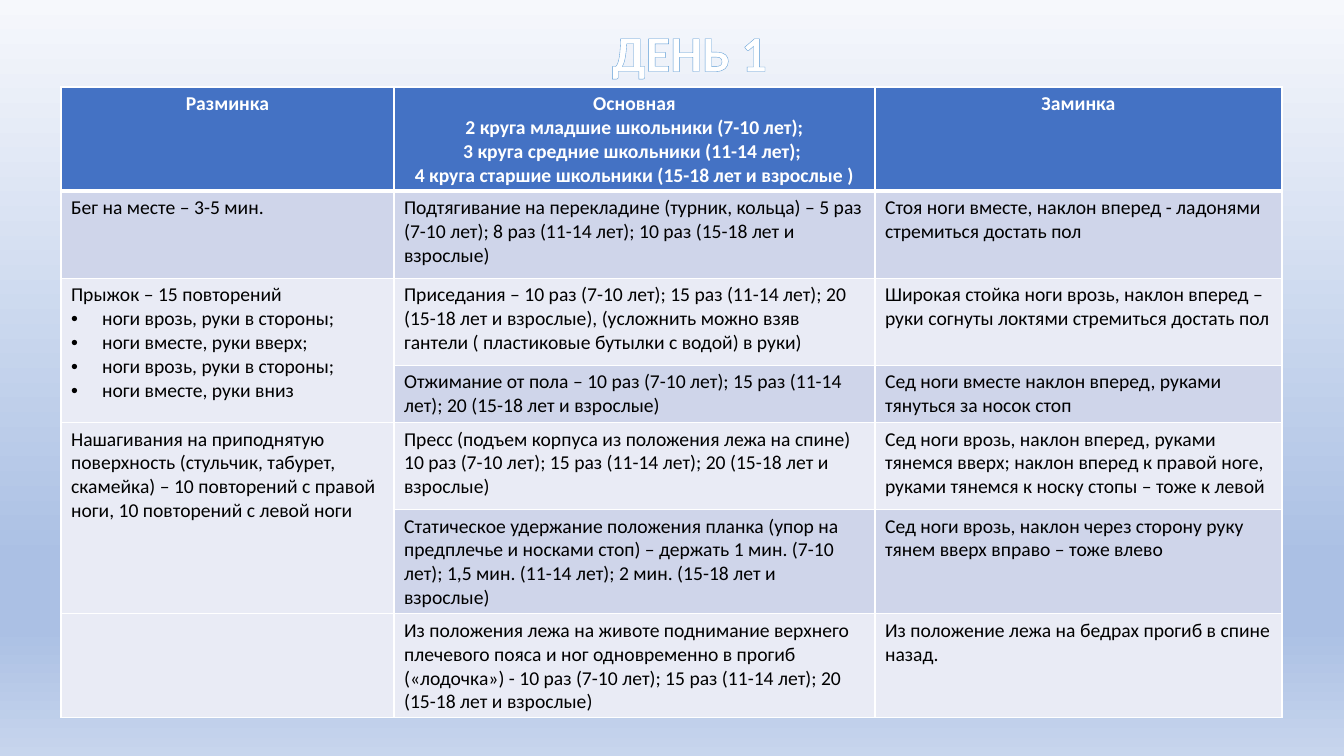
from dataclasses import dataclass

from lxml.etree import SubElement
from pptx import Presentation
from pptx.dml.color import RGBColor
from pptx.enum.text import MSO_ANCHOR, MSO_AUTO_SIZE, PP_ALIGN
from pptx.oxml import parse_xml
from pptx.oxml.ns import nsdecls, qn
from pptx.slide import Slide
from pptx.table import _Cell
from pptx.text.text import _Paragraph
from pptx.util import Emu, Pt

PX_PER_INCH = 100.8
WHITE, BLACK = "FFFFFF", "000000"
HEADER_FILL, DARK_BAND, LIGHT_BAND = "4472C4", "CFD5EA", "E9EBF5"
BACKGROUND_STOPS = ((0, "F6F8FC"), (74, "ABC0E4"), (83, "ABC0E4"), (100, "C7D5ED"))
COLUMN_WIDTHS = (333, 481, 407)
BULLET = "• "
HEADER_FONT = {"name": "Calibri", "size": Pt(14), "bold": True}
BODY_FONT = {**HEADER_FONT, "bold": False}
TITLE_FONT = {**HEADER_FONT, "size": Pt(36)}


@dataclass(frozen=True)
class WorkoutRow:
    """A table row; a warm-up of None continues the cell above."""
    warm_up: str | None
    main_part: str
    cool_down: str
    fill: str
    height: int = 87


ROWS = (
    WorkoutRow(
        "Разминка",
        "Основная\n2 круга младшие школьники (7-10 лет);\n"
        "3 круга средние школьники (11-14 лет); \n"
        "4 круга старшие школьники (15-18 лет и взрослые )",
        "Заминка", HEADER_FILL),
    WorkoutRow(
        "Бег на месте – 3-5 мин.",
        "Подтягивание на перекладине (турник, кольца) – 5 раз (7-10 лет); "
        "8 раз (11-14 лет); 10 раз (15-18 лет и взрослые)",
        "Стоя ноги вместе, наклон вперед - ладонями стремиться достать пол", DARK_BAND),
    WorkoutRow(
        "Прыжок – 15 повторений\n• ноги врозь, руки в стороны;\n• ноги вместе, руки вверх;\n"
        "• ноги врозь, руки в стороны;\n• ноги вместе, руки вниз",
        "Приседания – 10 раз (7-10 лет); 15 раз (11-14 лет); 20 (15-18 лет и взрослые), "
        "(усложнить можно взяв гантели ( пластиковые бутылки с водой) в руки)",
        "Широкая стойка ноги врозь, наклон вперед – руки согнуты локтями "
        "стремиться достать пол", LIGHT_BAND),
    WorkoutRow(
        None,
        "Отжимание от пола – 10 раз (7-10 лет); 15 раз (11-14 лет); 20 (15-18 лет и взрослые)",
        "Сед ноги вместе наклон вперед, руками тянуться за носок стоп", DARK_BAND, 56),
    WorkoutRow(
        "Нашагивания на приподнятую поверхность (стульчик, табурет, скамейка) – "
        "10 повторений с правой ноги, 10 повторений с левой ноги",
        "Пресс (подъем корпуса из положения лежа на спине) 10 раз (7-10 лет); "
        "15 раз (11-14 лет); 20 (15-18 лет и взрослые)",
        "Сед ноги врозь, наклон вперед, руками тянемся вверх; наклон вперед к правой ноге, "
        "руками тянемся к носку стопы – тоже к левой", LIGHT_BAND),
    WorkoutRow(
        None,
        "Статическое удержание положения планка (упор на предплечье и носками стоп) – "
        "держать 1 мин. (7-10 лет); 1,5 мин. (11-14 лет); 2 мин. (15-18 лет и взрослые)",
        "Сед ноги врозь, наклон через сторону руку тянем вверх вправо – тоже влево", DARK_BAND),
    WorkoutRow(
        "",
        "Из положения лежа на животе поднимание верхнего плечевого пояса и ног одновременно "
        "в прогиб («лодочка») - 10 раз (7-10 лет); 15 раз (11-14 лет); "
        "20 (15-18 лет и взрослые)",
        "Из положение лежа на бедрах прогиб в спине назад.", LIGHT_BAND),
)


def px(length: int) -> Emu:
    return Emu(round(length * 914400 / PX_PER_INCH))


def color(value: str) -> RGBColor:
    return RGBColor.from_string(value)


def set_attributes(target: object, values: dict) -> None:
    for name, value in values.items():
        setattr(target, name, value)


def line_xml(tag: str, fill: str, width: int):
    return parse_xml(
        f'<a:{tag} {nsdecls("a")} w="{width}"><a:solidFill><a:srgbClr val="{fill}"/>'
        f'</a:solidFill></a:{tag}>')


def paint_background(slide: Slide) -> None:
    fill = slide.background.fill
    fill.gradient()
    fill.gradient_angle = 270
    stops = slide.element.find(".//" + qn("a:gsLst"))
    stops.clear()
    for percent, value in BACKGROUND_STOPS:
        stop = SubElement(stops, qn("a:gs"), pos=str(percent * 1000))
        SubElement(stop, qn("a:srgbClr"), val=value)


def add_title(slide: Slide) -> None:
    title = slide.shapes.title
    set_attributes(title, {"left": px(601), "top": px(16), "width": px(177), "height": px(72)})
    frame = title.text_frame
    set_attributes(frame, {"word_wrap": False, "auto_size": MSO_AUTO_SIZE.SHAPE_TO_FIT_TEXT,
                           "vertical_anchor": MSO_ANCHOR.TOP})
    paragraph = frame.paragraphs[0]
    paragraph.alignment = PP_ALIGN.CENTER
    run = paragraph.add_run()
    run.text = "ДЕНЬ 1"
    set_attributes(run.font, TITLE_FONT)
    run.font.color.rgb = color(WHITE)
    run.font._element.insert(0, line_xml("ln", "5B9BD5", Pt(0.8)))


def add_bullet(paragraph: _Paragraph) -> None:
    properties = paragraph._p.get_or_add_pPr()
    properties.set("marL", str(px(31)))
    properties.set("indent", str(-px(31)))
    SubElement(properties, qn("a:buFont"), typeface="Arial")
    SubElement(properties, qn("a:buChar"), char=BULLET.strip())


def format_cell(cell: _Cell, text: str, fill: str) -> None:
    is_header = fill == HEADER_FILL
    cell.fill.solid()
    cell.fill.fore_color.rgb = color(fill)
    properties = cell._tc.get_or_add_tcPr()
    for index, side in enumerate("LRTB"):
        width = Pt(3 if is_header and side == "B" else 1)
        properties.insert(index, line_xml(f"ln{side}", WHITE, width))
    for index, line in enumerate(text.split("\n")):
        frame = cell.text_frame
        paragraph = frame.add_paragraph() if index else frame.paragraphs[0]
        paragraph.alignment = PP_ALIGN.CENTER if is_header else PP_ALIGN.LEFT
        set_attributes(paragraph.font, HEADER_FONT if is_header else BODY_FONT)
        if line.startswith(BULLET):
            add_bullet(paragraph)
        if line:
            run = paragraph.add_run()
            run.text = line.removeprefix(BULLET)
            set_attributes(run.font, HEADER_FONT if is_header else BODY_FONT)
            run.font.color.rgb = color(WHITE if is_header else BLACK)


def add_workout_table(slide: Slide) -> None:
    height = sum(row.height for row in ROWS)
    table = slide.shapes.add_table(len(ROWS), len(COLUMN_WIDTHS), px(61), px(87),
                                   px(sum(COLUMN_WIDTHS)), px(height)).table
    for column, width in zip(table.columns, COLUMN_WIDTHS):
        column.width = px(width)
    for index, row in enumerate(ROWS):
        table.rows[index].height = px(row.height)
        warm_up_fill = LIGHT_BAND if row.warm_up is None else row.fill
        format_cell(table.cell(index, 0), row.warm_up or "", warm_up_fill)
        format_cell(table.cell(index, 1), row.main_part, row.fill)
        format_cell(table.cell(index, 2), row.cool_down, row.fill)
        if row.warm_up is None:
            table.cell(index - 1, 0).merge(table.cell(index, 0))


def main() -> None:
    presentation = Presentation()
    set_attributes(presentation, {"slide_width": px(1344), "slide_height": px(756)})
    slide = presentation.slides.add_slide(presentation.slide_layouts[5])
    paint_background(slide)
    add_workout_table(slide)
    add_title(slide)
    presentation.save("out.pptx")


if __name__ == "__main__":
    main()
